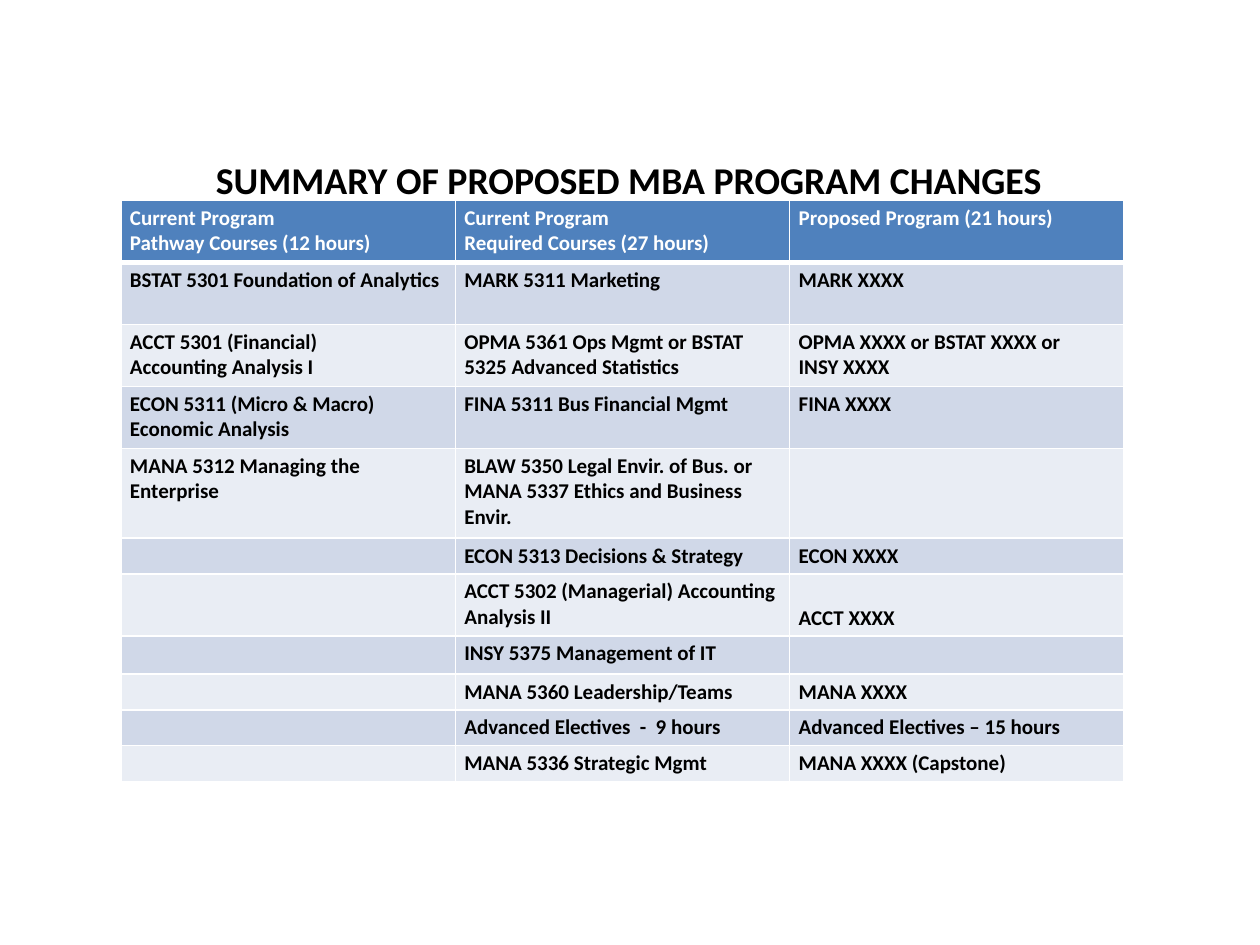
from lxml import etree
from pptx import Presentation
from pptx.dml.color import RGBColor
from pptx.enum.text import MSO_ANCHOR, PP_ALIGN
from pptx.oxml.ns import qn
from pptx.util import Cm, Pt

CENTER, LEFT = PP_ALIGN.CENTER, PP_ALIGN.LEFT
TOP, MIDDLE, BOTTOM = MSO_ANCHOR.TOP, MSO_ANCHOR.MIDDLE, MSO_ANCHOR.BOTTOM

FONT = "Calibri"
WHITE, BLACK = "FFFFFF", "000000"
HEADER_FILL = "4F81BD"
BAND_FILLS = ["E9EDF4", "D0D8E8"]
COLUMN_WIDTH = 6.74
ONE_LINE, TWO_LINES, THREE_LINES = 0.72, 1.25, 1.81

# Row height in cm, then pathway, required and proposed courses
COURSES = [
    (TWO_LINES, "Current Program\nPathway Courses (12 hours)",
     "Current Program\nRequired Courses (27 hours)", "Proposed Program (21 hours)"),
    (TWO_LINES, "BSTAT 5301 Foundation of Analytics", "MARK 5311 Marketing", "MARK XXXX"),
    (TWO_LINES, "ACCT 5301 (Financial)\nAccounting Analysis I",
     "OPMA 5361 Ops Mgmt or BSTAT 5325 Advanced Statistics",
     "OPMA XXXX or BSTAT XXXX or\nINSY XXXX"),
    (TWO_LINES, "ECON 5311 (Micro & Macro)\nEconomic Analysis",
     "FINA 5311 Bus Financial Mgmt", "FINA XXXX"),
    (THREE_LINES, "MANA 5312 Managing the Enterprise",
     "BLAW 5350 Legal Envir. of Bus. or MANA 5337 Ethics and Business Envir.", ""),
    (ONE_LINE, "", "ECON 5313 Decisions & Strategy", "ECON XXXX"),
    (TWO_LINES, "", "ACCT 5302 (Managerial) Accounting Analysis II", "ACCT XXXX"),
    (0.77, "", "INSY 5375 Management of IT", ""),
    (ONE_LINE, "", "MANA 5360 Leadership/Teams", "MANA XXXX"),
    (ONE_LINE, "", "Advanced Electives  -  9 hours", "Advanced Electives – 15 hours"),
    (ONE_LINE, "", "MANA 5336 Strategic Mgmt", "MANA XXXX (Capstone)"),
]


def rgb(value):
    return RGBColor.from_string(value)


def write_text(frame, text, size=12, color=BLACK, align=LEFT):
    frame.word_wrap = True
    for index, line in enumerate(text.split("\n")):
        paragraph = frame.paragraphs[0] if index == 0 else frame.add_paragraph()
        paragraph.alignment = align
        if line:
            run = paragraph.add_run()
            run.text = line
            run.font.name = FONT
            run.font.size = Pt(size)
            run.font.bold = True
            run.font.color.rgb = rgb(color)
        else:
            # An empty cell keeps the small text size, so its row stays low
            etree.SubElement(paragraph._p, qn("a:endParaRPr"), sz=str(size * 100))


def set_borders(cell, top=1, bottom=1):
    properties = cell._tc.get_or_add_tcPr()
    for side, width in (("L", 1), ("R", 1), ("T", top), ("B", bottom)):
        line = etree.SubElement(properties, qn(f"a:ln{side}"), w=str(Pt(width)))
        fill = etree.SubElement(line, qn("a:solidFill"))
        etree.SubElement(fill, qn("a:srgbClr"), val=WHITE)


def format_cell(cell, fill, anchor=TOP):
    cell.margin_left = cell.margin_right = Cm(0.18)
    cell.margin_top = cell.margin_bottom = Cm(0.1)
    cell.vertical_anchor = anchor
    cell.fill.solid()
    cell.fill.fore_color.rgb = rgb(fill)


def add_title(slide, text):
    shape = slide.shapes.add_textbox(Cm(1.73), Cm(3.02), Cm(21.9), Cm(1.2))
    shape.text_frame.vertical_anchor = MIDDLE
    write_text(shape.text_frame, text, size=21.6, align=CENTER)


def add_course_table(slide):
    height = sum(row[0] for row in COURSES)
    table = slide.shapes.add_table(len(COURSES), 3, Cm(2.44), Cm(4.04),
                                   Cm(3 * COLUMN_WIDTH), Cm(height)).table
    for column in table.columns:
        column.width = Cm(COLUMN_WIDTH)

    for row_index, (row_height, *texts) in enumerate(COURSES):
        table.rows[row_index].height = Cm(row_height)
        is_header = row_index == 0
        for column_index, text in enumerate(texts):
            cell = table.cell(row_index, column_index)
            # A thick rule separates the header from the courses
            set_borders(cell, top=3 if row_index == 1 else 1, bottom=3 if is_header else 1)
            format_cell(cell, HEADER_FILL if is_header else BAND_FILLS[row_index % 2],
                        anchor=BOTTOM if text == "ACCT XXXX" else TOP)
            write_text(cell.text_frame, text, color=WHITE if is_header else BLACK)


def main():
    presentation = Presentation()
    presentation.slide_width = Cm(25.4)
    presentation.slide_height = Cm(19.05)
    slide = presentation.slides.add_slide(presentation.slide_layouts[6])
    add_title(slide, "SUMMARY OF PROPOSED MBA PROGRAM CHANGES")
    add_course_table(slide)
    presentation.save("out.pptx")


if __name__ == "__main__":
    main()
